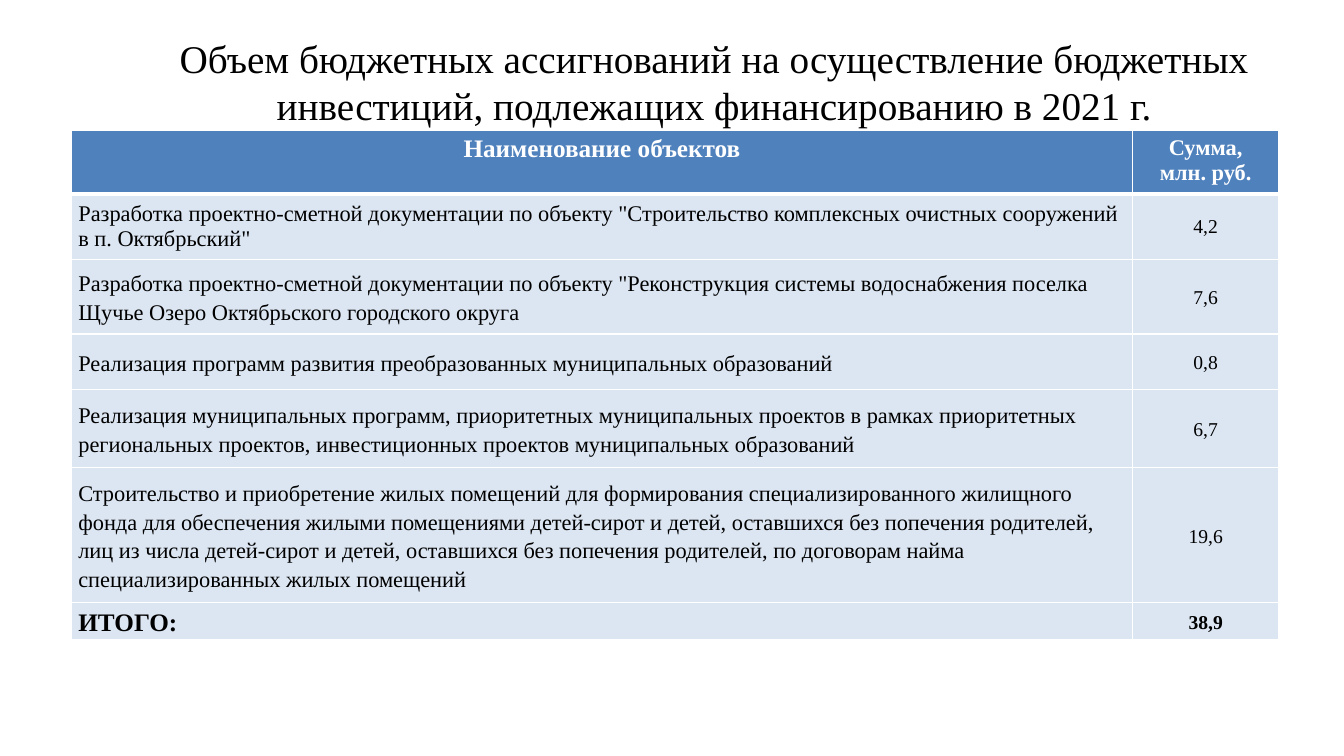
from lxml import etree
from pptx import Presentation
from pptx.dml.color import RGBColor
from pptx.enum import text
from pptx.oxml import ns
from pptx.util import Pt

FONT = "Times New Roman"
BLACK = RGBColor(0x00, 0x00, 0x00)
WHITE = RGBColor(0xFF, 0xFF, 0xFF)
HEADER_BLUE = RGBColor(0x4F, 0x81, 0xBD)
BODY_BLUE = RGBColor(0xDC, 0xE6, 0xF2)

TITLE = "Объем бюджетных ассигнований на осуществление бюджетных инвестиций, подлежащих финансированию в 2021 г."
ROWS = [
    ("Наименование объектов", "Сумма, млн. руб.", 34),
    ("Разработка проектно-сметной документации по объекту \"Строительство комплексных "
     "очистных сооружений в п. Октябрьский\"", "4,2", 46.5),
    ("Разработка проектно-сметной документации по объекту \"Реконструкция системы "
     "водоснабжения поселка Щучье Озеро Октябрьского городского округа", "7,6", 53.5),
    ("Реализация программ развития преобразованных муниципальных образований", "0,8", 39.5),
    ("Реализация муниципальных программ, приоритетных муниципальных проектов в рамках "
     "приоритетных региональных проектов, инвестиционных проектов муниципальных образований",
     "6,7", 56),
    ("Строительство и приобретение жилых помещений для формирования специализированного "
     "жилищного фонда для обеспечения жилыми помещениями детей-сирот и детей, оставшихся без "
     "попечения родителей, лиц из числа детей-сирот и детей, оставшихся без попечения "
     "родителей, по договорам найма специализированных жилых помещений", "19,6", 96.5),
    ("ИТОГО:", "38,9", 26.5),
]


def style_paragraph(paragraph, size, color, bold=False, centered=True, spacing=1.0):
    """Format one paragraph and its runs."""
    paragraph.alignment = text.PP_ALIGN.CENTER if centered else text.PP_ALIGN.LEFT
    paragraph.line_spacing = spacing
    for run in paragraph.runs:
        run.font.name = FONT
        run.font.size = Pt(size)
        run.font.bold = bold
        run.font.color.rgb = color


def add_title(slide, left, top, width, height):
    """Place the centred slide title in the given box."""
    frame = slide.shapes.add_textbox(Pt(left), Pt(top), Pt(width), Pt(height)).text_frame
    frame.word_wrap = True
    frame.vertical_anchor = text.MSO_ANCHOR.MIDDLE
    frame.text = TITLE
    style_paragraph(frame.paragraphs[0], 28, BLACK)


def add_borders(cell, top, bottom):
    """Draw white cell borders with the given top and bottom widths."""
    properties = cell._tc.get_or_add_tcPr()
    for side, width in (("L", 1), ("R", 1), ("T", top), ("B", bottom)):
        line = etree.SubElement(properties, ns.qn(f"a:ln{side}"), w=str(Pt(width)))
        fill = etree.SubElement(line, ns.qn("a:solidFill"))
        etree.SubElement(fill, ns.qn("a:srgbClr"), val=str(WHITE))


def fill_cell(cell, content, row, column):
    """Write and format one table cell according to its row and column."""
    header, total = row == 0, row == len(ROWS) - 1
    add_borders(cell, 3 if row == 1 else 1, 3 if header else 1)
    cell.fill.solid()
    cell.fill.fore_color.rgb = HEADER_BLUE if header else BODY_BLUE
    cell.margin_left = cell.margin_right = Pt(9.4 if header else 5)
    cell.margin_top = cell.margin_bottom = Pt(3.6 if header else 0)
    cell.vertical_anchor = text.MSO_ANCHOR.TOP if header else text.MSO_ANCHOR.MIDDLE
    cell.text = content
    if column == 0:
        size = 18 if header or total else 16
    else:
        size = 16 if header else 14
    style_paragraph(cell.text_frame.paragraphs[0], size, WHITE if header else BLACK,
                    header or total, header or column == 1, 1.15 if row > 1 else 1.0)


def add_investment_table(slide, left, top, width, amount_width):
    """Place the table of investment objects and amounts."""
    height = sum(row_height for _, _, row_height in ROWS)
    table = slide.shapes.add_table(len(ROWS), 2, Pt(left), Pt(top), Pt(width), Pt(height)).table
    table.horz_banding = False
    table.columns[0].width = Pt(width - amount_width)
    table.columns[1].width = Pt(amount_width)
    for row, (name, amount, row_height) in enumerate(ROWS):
        table.rows[row].height = Pt(row_height)
        for column, content in enumerate((name, amount)):
            fill_cell(table.cell(row, column), content, row, column)


def main():
    """Build the slide and save the presentation."""
    presentation = Presentation()
    presentation.slide_width, presentation.slide_height = Pt(960), Pt(540)
    slide = presentation.slides.add_slide(presentation.slide_layouts[6])
    add_title(slide, 78, 13, 864, 90)
    add_investment_table(slide, 51, 93, 862.5, 104.5)
    presentation.save("out.pptx")


if __name__ == "__main__":
    main()
